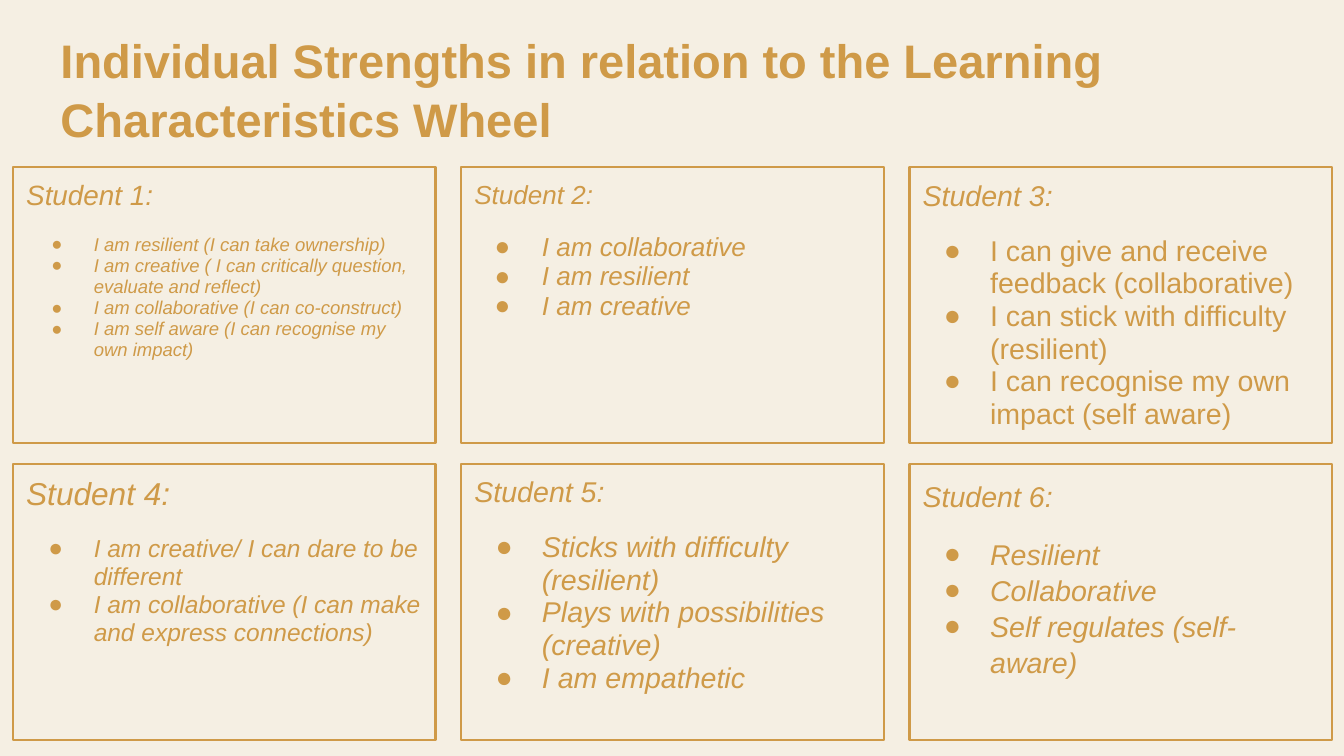
from lxml import etree
from pptx import Presentation
from pptx.dml.color import RGBColor
from pptx.enum.shapes import MSO_SHAPE
from pptx.enum.text import MSO_ANCHOR, PP_ALIGN
from pptx.oxml.ns import qn
from pptx.util import Inches, Pt

RECTANGLE = MSO_SHAPE.RECTANGLE
TOP = MSO_ANCHOR.TOP
LEFT = PP_ALIGN.LEFT

COLORS = {"background": "F5EFE3", "gold": "CF9A48"}
FONT = "Arial"
INSET = Inches(0.13)

# Card grid, in inches
COLUMNS = 3
GRID_LEFT, GRID_TOP = 0.13, 1.66
COLUMN_STEP, ROW_STEP = 4.445, 2.94
CARD_WIDTH, CARD_HEIGHT = 4.19, 2.74
BULLET_INDENT = 0.67

# Heading size, bullet size, bullet hanging indent, line spacing, italic bullets, strengths
STUDENTS = [
    (19.9, 13.2, 0.42, 0.95, True, [
        "I am resilient (I can take ownership)",
        "I am creative ( I can critically question, evaluate and reflect)",
        "I am collaborative (I can co-construct)",
        "I am self aware (I can recognise my own impact)"]),
    (18.6, 18.6, 0.47, 0.95, True, [
        "I am collaborative",
        "I am resilient",
        "I am creative"]),
    (20.4, 20.4, 0.46, 0.95, False, [
        "I can give and receive feedback (collaborative)",
        "I can stick with difficulty (resilient)",
        "I can recognise my own impact (self aware)"]),
    (22.6, 17.5, 0.45, 0.95, True, [
        "I am creative/ I can dare to be different",
        "I am collaborative (I can make and express connections)"]),
    (20.4, 20.4, 0.46, 0.95, True, [
        "Sticks with difficulty (resilient)",
        "Plays with possibilities (creative)",
        "I am empathetic"]),
    (20.4, 20.4, 0.46, 1.05, True, [
        "Resilient",
        "Collaborative",
        "Self regulates (self-aware)"]),
]


def prepare_frame(shape):
    """Give the shape's text frame equal insets, wrapping and top anchoring."""
    frame = shape.text_frame
    frame.word_wrap = True
    frame.vertical_anchor = TOP
    frame.margin_left = frame.margin_right = INSET
    frame.margin_top = frame.margin_bottom = INSET
    return frame


def format_paragraph(paragraph, size, line_spacing, bold=False, italic=False):
    paragraph.alignment = LEFT
    paragraph.line_spacing = line_spacing
    for run in paragraph.runs:
        run.font.name = FONT
        run.font.size = Pt(size)
        run.font.bold = bold
        run.font.italic = italic
        run.font.color.rgb = RGBColor.from_string(COLORS["gold"])


presentation = Presentation()
presentation.slide_width = Inches(13.33)
presentation.slide_height = Inches(7.5)
slide = presentation.slides.add_slide(presentation.slide_layouts[6])
slide.background.fill.solid()
slide.background.fill.fore_color.rgb = RGBColor.from_string(COLORS["background"])

title = slide.shapes.add_textbox(Inches(0.47), Inches(0.16), Inches(12.42), Inches(1.37))
title_frame = prepare_frame(title)
title_frame.text = "Individual Strengths in relation to the Learning Characteristics Wheel"
format_paragraph(title_frame.paragraphs[0], 33.6, 1.04, bold=True)

for index, student in enumerate(STUDENTS):
    heading_size, bullet_size, hanging, line_spacing, italic, strengths = student
    row, column = divmod(index, COLUMNS)
    card = slide.shapes.add_shape(
        RECTANGLE,
        Inches(GRID_LEFT + column * COLUMN_STEP), Inches(GRID_TOP + row * ROW_STEP),
        Inches(CARD_WIDTH), Inches(CARD_HEIGHT))
    card.shadow.inherit = False
    card.fill.background()
    card.line.color.rgb = RGBColor.from_string(COLORS["gold"])
    card.line.width = Pt(1.5)

    frame = prepare_frame(card)
    frame.text = f"Student {index + 1}:"
    format_paragraph(frame.paragraphs[0], heading_size, line_spacing, italic=True)

    for position, strength in enumerate(strengths):
        paragraph = frame.add_paragraph()
        paragraph.text = strength
        format_paragraph(paragraph, bullet_size, line_spacing, italic=italic)
        paragraph.space_before = Pt(16 if position == 0 else 0)
        properties = paragraph._p.get_or_add_pPr()
        properties.set("marL", str(Inches(BULLET_INDENT)))
        properties.set("indent", str(-Inches(hanging)))
        bullet_color = etree.SubElement(properties, qn("a:buClr"))
        etree.SubElement(bullet_color, qn("a:srgbClr"), val=COLORS["gold"])
        etree.SubElement(properties, qn("a:buFont"), typeface=FONT)
        etree.SubElement(properties, qn("a:buChar"), char="●")

presentation.save("out.pptx")
